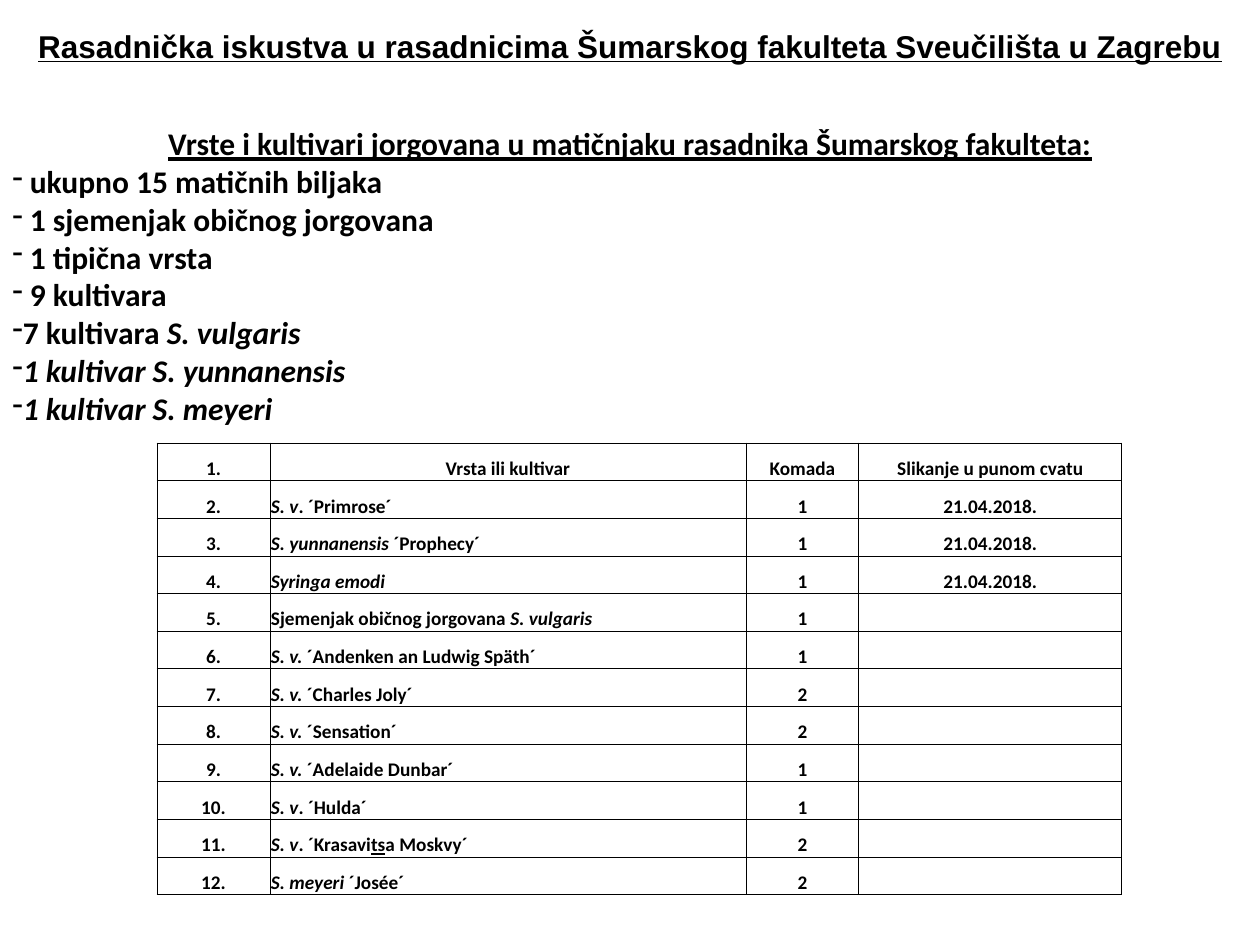
from lxml import etree
from pptx import Presentation
from pptx.dml.color import RGBColor
from pptx.enum.text import MSO_ANCHOR, MSO_AUTO_SIZE, PP_ALIGN
from pptx.oxml.ns import qn
from pptx.util import Emu, Pt

PX = 914400 // 126
BLACK = RGBColor(0x00, 0x00, 0x00)
LEFT, CENTER = PP_ALIGN.LEFT, PP_ALIGN.CENTER
TOP, MIDDLE, BOTTOM = MSO_ANCHOR.TOP, MSO_ANCHOR.MIDDLE, MSO_ANCHOR.BOTTOM
FIT_SHAPE = MSO_AUTO_SIZE.SHAPE_TO_FIT_TEXT

TITLE = "_Rasadnička iskustva u rasadnicima Šumarskog fakulteta Sveučilišta u Zagrebu_"
SUBTITLE = "_Vrste i kultivari jorgovana u matičnjaku rasadnika Šumarskog fakulteta:_"
STOCK_SUMMARY = [
    " ukupno 15 matičnih biljaka",
    " 1 sjemenjak običnog jorgovana",
    " 1 tipična vrsta",
    " 9 kultivara",
    "7 kultivara *S. vulgaris*",
    "*1 kultivar S. yunnanensis*",
    "*1 kultivar S. meyeri*",
]
PHOTO_DATE = "21.04.2018."
LILACS = [
    ("Vrsta ili kultivar", "Komada", "Slikanje u punom cvatu"),
    ("*S. v*. ´Primrose´", "1", PHOTO_DATE),
    ("*S. yunnanensis *´Prophecy´", "1", PHOTO_DATE),
    ("*Syringa emodi*", "1", PHOTO_DATE),
    ("Sjemenjak običnog jorgovana *S. vulgaris*", "1", ""),
    ("*S. v.* ´Andenken an Ludwig Späth´", "1", ""),
    ("*S. v.* ´Charles Joly´", "2", ""),
    ("*S. v. *´Sensation´", "2", ""),
    ("*S. v.* ´Adelaide Dunbar´", "1", ""),
    ("*S. v*. ´Hulda´", "1", ""),
    ("*S. v*. ´Krasavi_ts_a Moskvy´", "2", ""),
    ("*S. meyeri *´Josée´", "2", ""),
]
COLUMN_WIDTHS = (113, 476, 113, 263)


def set_all(target, values):
    for name, value in values.items():
        setattr(target, name, value)


class SlideBuilder:
    """Holds the current slide and its text style."""

    def __init__(self, slide, color=BLACK):
        self.slide = slide
        self.color = color

    def fill_paragraph(self, paragraph, marked_text, font, size, align=LEFT):
        """Add runs; *stars* give italic and _underscores_ underline."""
        paragraph.alignment = align
        for i, slanted in enumerate(marked_text.split("*")):
            for j, text in enumerate(slanted.split("_")):
                if text:
                    run = paragraph.add_run()
                    run.text = text
                    set_all(run.font, {"name": font, "size": Pt(size), "bold": True,
                                       "italic": i % 2 == 1, "underline": j % 2 == 1})
                    run.font.color.rgb = self.color

    def text_box(self, box, heading, font, size, anchor=TOP, bullets=()):
        frame = self.slide.shapes.add_textbox(*(Emu(n * PX) for n in box)).text_frame
        set_all(frame, {"word_wrap": True, "auto_size": FIT_SHAPE,
                        "vertical_anchor": anchor})
        self.fill_paragraph(frame.paragraphs[0], heading, font, size, CENTER)
        for item in bullets:
            paragraph = frame.add_paragraph()
            self.fill_paragraph(paragraph, item, font, size)
            properties = paragraph._p.get_or_add_pPr()
            etree.SubElement(properties, qn("a:buFontTx"))
            etree.SubElement(properties, qn("a:buChar"), char="-")

    def border(self, cell, width=0.5):
        properties = cell._tc.get_or_add_tcPr()
        for position, side in enumerate(("a:lnL", "a:lnR", "a:lnT", "a:lnB")):
            line = etree.Element(qn(side), w=str(Pt(width)))
            fill = etree.SubElement(line, qn("a:solidFill"))
            etree.SubElement(fill, qn("a:srgbClr"), val=str(self.color))
            properties.insert(position, line)

    def table(self, box, widths, rows, font, size):
        """Draw a numbered table whose name column is left-aligned below the header."""
        table = self.slide.shapes.add_table(
            len(rows), len(widths), *(Emu(n * PX) for n in box)).table
        set_all(table, {"first_row": False, "horz_banding": False})
        for column, width in zip(table.columns, widths):
            column.width = Emu(width * PX)
        for r, row in enumerate(rows):
            for c, text in enumerate((f"{r + 1}.", *row)):
                cell = table.cell(r, c)
                set_all(cell, {"vertical_anchor": BOTTOM, "margin_left": PX,
                               "margin_right": PX, "margin_top": PX,
                               "margin_bottom": 0})
                cell.fill.background()
                self.border(cell)
                paragraph = cell.text_frame.paragraphs[0]
                self.fill_paragraph(paragraph, text, font, size,
                                    LEFT if c == 1 and r > 0 else CENTER)
                if not text:
                    etree.SubElement(paragraph._p, qn("a:endParaRPr"), sz=str(size * 100))


def main():
    deck = Presentation()
    set_all(deck, {"slide_width": Emu(1260 * PX), "slide_height": Emu(945 * PX)})
    builder = SlideBuilder(deck.slides.add_slide(deck.slide_layouts[6]))
    builder.text_box((0, 20, 1260, 51), TITLE, "Arial", 18, MIDDLE)
    builder.table((157, 443, sum(COLUMN_WIDTHS), 452), COLUMN_WIDTHS, LILACS, "Calibri", 11)
    builder.text_box((0, 118, 1260, 318), SUBTITLE, "Calibri", 18, bullets=STOCK_SUMMARY)
    deck.save("out.pptx")


if __name__ == "__main__":
    main()
